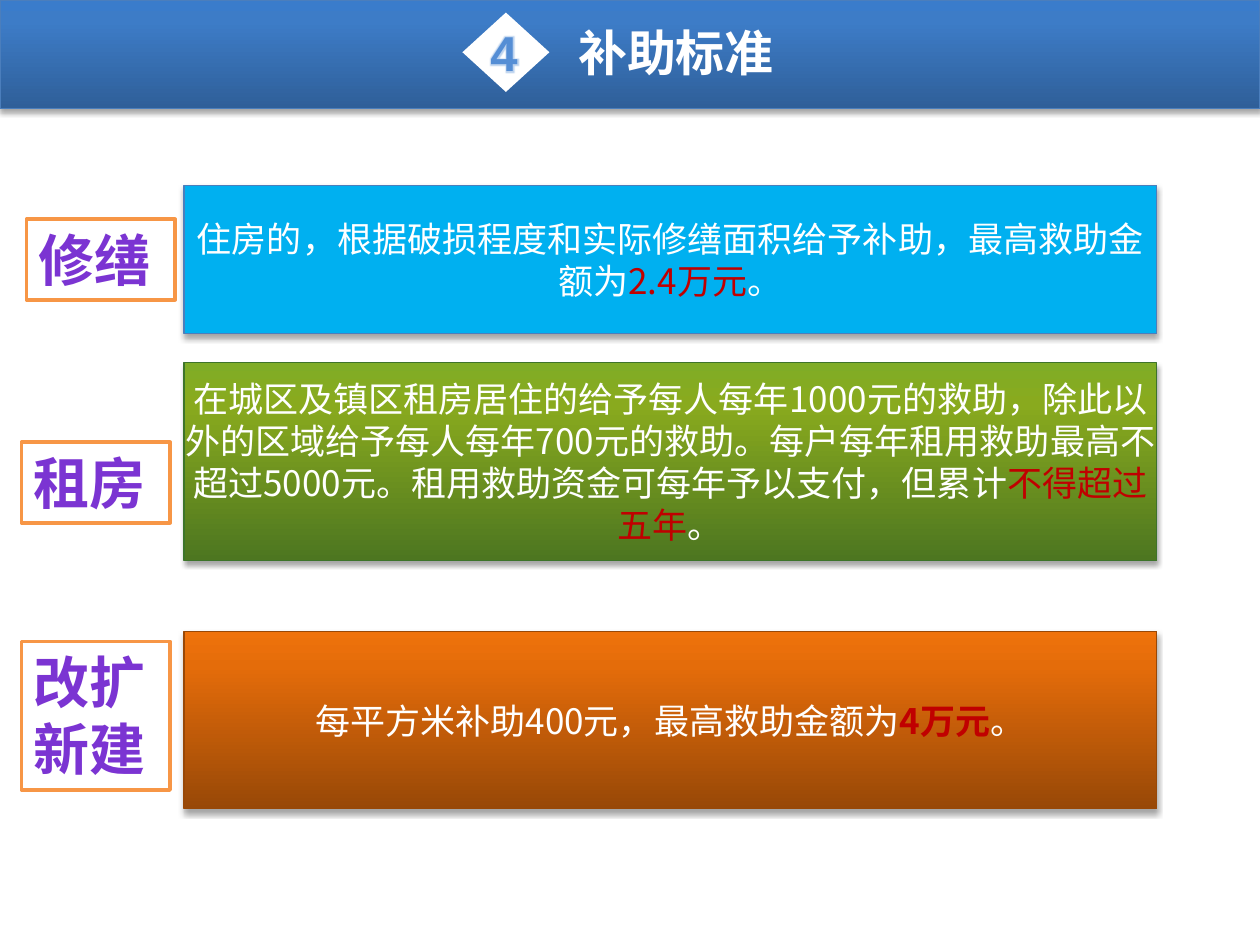
from copy import deepcopy

from pptx import Presentation
from pptx.dml.color import RGBColor
from pptx.enum.shapes import MSO_SHAPE
from pptx.enum.text import MSO_ANCHOR, MSO_AUTO_SIZE, PP_ALIGN
from pptx.oxml import parse_xml
from pptx.oxml.ns import nsdecls, qn
from pptx.util import Inches, Pt

RECTANGLE = MSO_SHAPE.RECTANGLE
DIAMOND = MSO_SHAPE.DIAMOND
CENTER = PP_ALIGN.CENTER
LEFT = PP_ALIGN.LEFT
MIDDLE = MSO_ANCHOR.MIDDLE
TOP = MSO_ANCHOR.TOP

CHINESE_FONT = "Noto Sans CJK SC"
COLORS = {
    "white": "FFFFFF",
    "blue_line": "4B7EBC",
    "sky": "00B0F0",
    "green_line": "3D742A",
    "brown": "984807",
    "orange": "F79646",
    "purple": "7B34D2",
    "red": "C00000",
    "number": "558ED5",
    "glow": "8EB4E3",
}
GRADIENTS = {
    "blue": [(0, "2F5F99"), (0.8, "3D7CC7"), (1, "3A7CCB")],
    "green": [(0, "4D7620"), (0.79, "89AA1E"), (1, "7FAC26")],
    "orange": [(0, "984807"), (0.8, "E46C0A"), (1, "EF720B")],
}

BOX_LEFT, BOX_WIDTH, LABEL_WIDTH = 1.46, 7.72, 1.18
STANDARDS = [
    {
        "label": "修缮", "label_at": (0.21, 1.74), "label_height": 0.64,
        "top": 1.47, "height": 1.18, "fill": "sky", "line": "blue_line",
        "runs": [
            ("住房的，根据破损程度和实际修缮面积给予补助，最高救助金额为", "white", False),
            ("2.4万元", "red", False),
            ("。", "white", False),
        ],
    },
    {
        "label": "租房", "label_at": (0.17, 3.51), "label_height": 0.64,
        "top": 2.88, "height": 1.57, "fill": "green", "line": "green_line",
        "runs": [
            ("在城区及镇区租房居住的给予每人每年1000元的救助，除此以外的区域给予每人每年700元的救助。"
             "每户每年租用救助最高不超过5000元。租用救助资金可每年予以支付，但累计", "white", False),
            ("不得超过五年", "red", False),
            ("。", "white", False),
        ],
    },
    {
        "label": "改扩新建", "label_at": (0.17, 5.09), "label_height": 1.18,
        "top": 5.01, "height": 1.41, "fill": "orange", "line": "brown",
        "runs": [
            ("每平方米补助400元，最高救助金额为", "white", False),
            ("4万元", "red", True),
            ("。", "white", False),
        ],
    },
]


def color(name):
    return RGBColor.from_string(COLORS[name])


def fill_shape(shape, name):
    if name not in GRADIENTS:
        shape.fill.solid()
        shape.fill.fore_color.rgb = color(name)
        return
    shape.fill.gradient()
    shape.fill.gradient_angle = 90
    stop_list = shape.element.spPr.find(".//" + qn("a:gsLst"))
    stop_list.append(deepcopy(stop_list[-1]))
    for stop, (position, value) in zip(shape.fill.gradient_stops, GRADIENTS[name]):
        stop.position = position
        stop.color.rgb = RGBColor.from_string(value)


def add_shape(shapes, kind, bounds, fill, line=None, line_width=0.75, shadow=False):
    shape = shapes.add_shape(kind, *map(Inches, bounds))
    fill_shape(shape, fill)
    if line:
        shape.line.color.rgb = color(line)
        shape.line.width = Pt(line_width)
    else:
        shape.line.fill.background()
    shape.shadow.inherit = False
    if shadow:
        effects = shape.element.spPr.find(qn("a:effectLst"))
        effects.append(parse_xml(
            f'<a:outerShdw {nsdecls("a")} blurRad="{Pt(3.1)}" dist="{Pt(1.8)}" '
            'dir="5400000" rotWithShape="0"><a:srgbClr val="000000">'
            '<a:alpha val="35000"/></a:srgbClr></a:outerShdw>'))
    return shape


def add_runs(shape, runs, size, alignment=LEFT, anchor=TOP, font_name=CHINESE_FONT):
    text_frame = shape.text_frame
    text_frame.vertical_anchor = anchor
    paragraph = text_frame.paragraphs[0]
    paragraph.alignment = alignment
    for text, color_name, bold in runs:
        run = paragraph.add_run()
        run.text = text
        run.font.size = Pt(size)
        run.font.bold = bold
        run.font.color.rgb = color(color_name)
        run.font.name = font_name
        properties = run.font._element
        properties.find(qn("a:latin")).addnext(
            parse_xml(f'<a:ea {nsdecls("a")} typeface="{font_name}"/>'))
    return paragraph


def add_heading(shapes, bounds, text, color_name, **options):
    box = shapes.add_textbox(*map(Inches, bounds))
    box.text_frame.word_wrap = False
    box.text_frame.auto_size = MSO_AUTO_SIZE.SHAPE_TO_FIT_TEXT
    return add_runs(box, [(text, color_name, True)], 28, **options)


def add_glow(run):
    run.font._element.find(qn("a:solidFill")).addnext(parse_xml(
        f'<a:effectLst {nsdecls("a")}><a:glow rad="{Pt(3.5)}">'
        f'<a:srgbClr val="{COLORS["glow"]}"><a:alpha val="60000"/></a:srgbClr>'
        '</a:glow></a:effectLst>'))


def add_standard(slide, standard):
    shapes = slide.shapes.add_group_shape().shapes
    box = add_shape(shapes, RECTANGLE,
                    (BOX_LEFT, standard["top"], BOX_WIDTH, standard["height"]),
                    standard["fill"], standard["line"], shadow=True)
    box.text_frame.word_wrap = True
    box.text_frame.margin_left = box.text_frame.margin_right = 0
    add_runs(box, standard["runs"], 20, CENTER, MIDDLE)

    label = add_shape(shapes, RECTANGLE,
                      (*standard["label_at"], LABEL_WIDTH, standard["label_height"]),
                      "white", "orange", 2)
    label.text_frame.word_wrap = True
    label.text_frame.auto_size = MSO_AUTO_SIZE.SHAPE_TO_FIT_TEXT
    add_runs(label, [(standard["label"], "purple", True)], 32)


def main():
    presentation = Presentation()
    presentation.slide_width = Inches(10)
    presentation.slide_height = Inches(7.5)
    slide = presentation.slides.add_slide(presentation.slide_layouts[6])

    add_shape(slide.shapes, RECTANGLE, (0, 0, 10, 0.86), "blue", "blue_line", shadow=True)
    add_heading(slide.shapes, (4.49, 0.13, 1.77, 0.57), "补助标准", "white")
    add_shape(slide.shapes, DIAMOND, (3.67, 0.1, 0.69, 0.63), "white")
    number = add_heading(slide.shapes, (3.79, 0.13, 0.42, 0.57), "4", "number",
                         alignment=CENTER, font_name="Arial")
    add_glow(number.runs[0])

    for standard in STANDARDS:
        add_standard(slide, standard)
    presentation.save("out.pptx")


if __name__ == "__main__":
    main()
